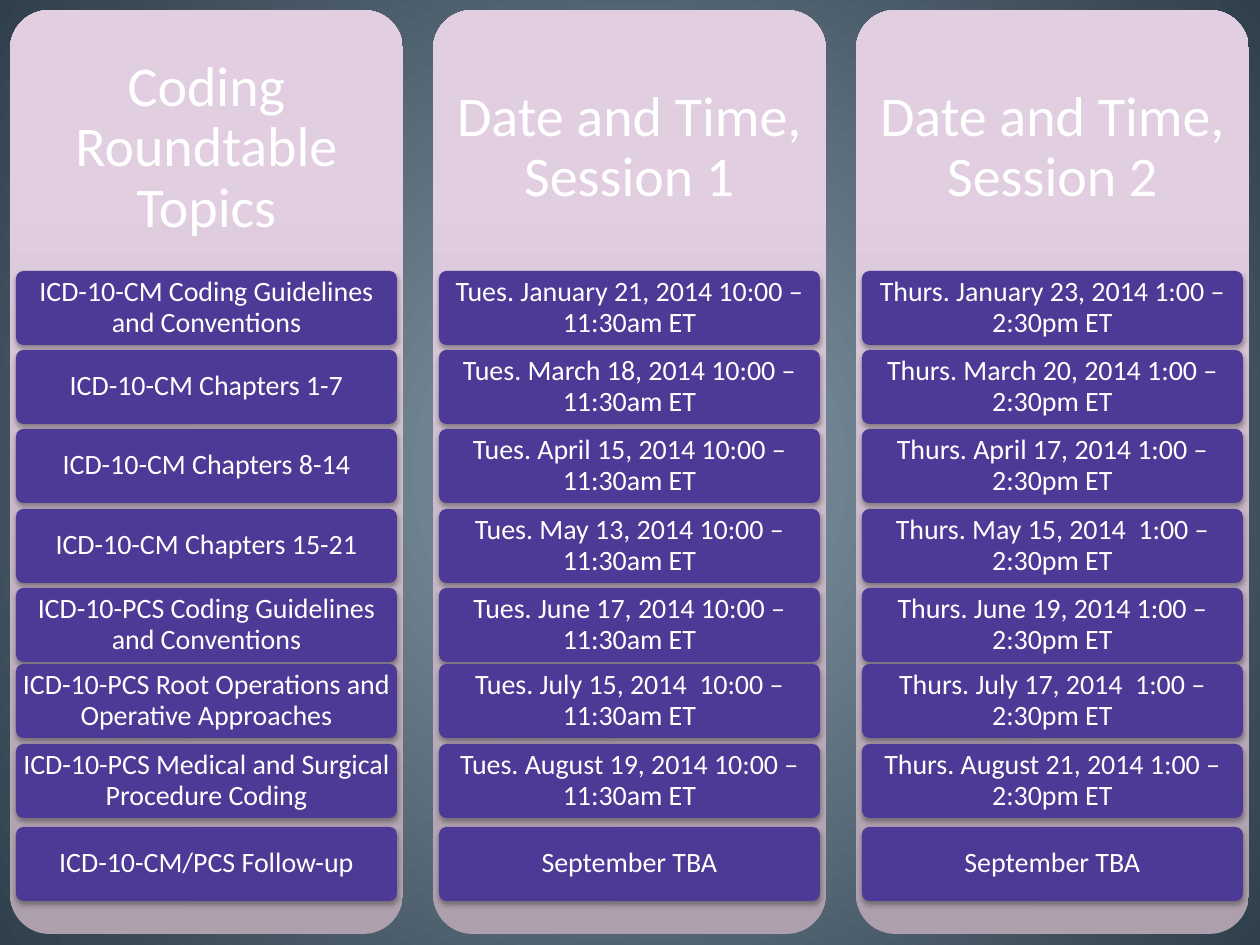
from lxml.etree import SubElement
from pptx import Presentation
from pptx.dml.color import RGBColor
from pptx.enum.shapes import MSO_SHAPE as Shape
from pptx.enum.text import MSO_ANCHOR as Anchor, PP_ALIGN as Align
from pptx.oxml import parse_xml
from pptx.oxml.ns import nsdecls, qn
from pptx.util import Inches, Pt

PX = 914400 // 126

COLUMN_LEFT, COLUMN_TOP, COLUMN_STEP = 10, 10, 423
COLUMN_WIDTH, COLUMN_HEIGHT, HEADER_HEIGHT = 393, 924, 277
CARD_INDENT, CARD_WIDTH, CARD_HEIGHT = 6, 381, 74
CARD_TOPS = [271, 350, 429, 509, 588, 664, 744, 827]

SHADOW = f"""<a:outerShdw {nsdecls('a')} blurRad="40000" dist="23000" dir="5400000"
  rotWithShape="0"><a:srgbClr val="000000"><a:alpha val="35000"/></a:srgbClr></a:outerShdw>"""
CENTRE_OUT = f"""<a:path {nsdecls('a')} path="circle">
  <a:fillToRect l="50000" t="50000" r="50000" b="50000"/></a:path>"""
BOTTOM_UP = f'<a:lin {nsdecls("a")} ang="16200000" scaled="0"/>'

COLUMNS = [
    ("Coding Roundtable Topics", [
        "ICD-10-CM Coding Guidelines and Conventions",
        "ICD-10-CM Chapters 1-7",
        "ICD-10-CM Chapters 8-14",
        "ICD-10-CM Chapters 15-21",
        "ICD-10-PCS Coding Guidelines and Conventions",
        "ICD-10-PCS Root Operations and Operative Approaches",
        "ICD-10-PCS Medical and Surgical Procedure Coding",
        "ICD-10-CM/PCS Follow-up",
    ]),
    ("Date and Time, Session 1", [
        "Tues. January 21, 2014 10:00 – 11:30am ET",
        "Tues. March 18, 2014 10:00 – 11:30am ET",
        "Tues. April 15, 2014 10:00 – 11:30am ET",
        "Tues. May 13, 2014 10:00 – 11:30am ET",
        "Tues. June 17, 2014 10:00 – 11:30am ET",
        "Tues. July 15, 2014  10:00 – 11:30am ET",
        "Tues. August 19, 2014 10:00 – 11:30am ET",
        "September TBA",
    ]),
    ("Date and Time, Session 2", [
        "Thurs. January 23, 2014 1:00 – 2:30pm ET",
        "Thurs. March 20, 2014 1:00 – 2:30pm ET",
        "Thurs. April 17, 2014 1:00 – 2:30pm ET",
        "Thurs. May 15, 2014  1:00 – 2:30pm ET",
        "Thurs. June 19, 2014 1:00 – 2:30pm ET",
        "Thurs. July 17, 2014  1:00 – 2:30pm ET",
        "Thurs. August 21, 2014 1:00 – 2:30pm ET",
        "September TBA",
    ]),
]


def set_gradient(fill, element, stops, direction):
    """Fill with (percent, colour) stops; element is the XML that holds the fill."""
    fill.gradient()
    gradient = element.find(".//" + qn("a:gradFill"))
    for child in list(gradient):
        gradient.remove(child)
    stop_list = SubElement(gradient, qn("a:gsLst"))
    for percent, colour in stops:
        stop = SubElement(stop_list, qn("a:gs"), pos=str(percent * 1000))
        SubElement(stop, qn("a:srgbClr"), val=colour)
    gradient.append(parse_xml(direction))


def write_text(box, text, size, side_inset, top_inset):
    frame = box.text_frame
    frame.word_wrap = True
    frame.vertical_anchor = Anchor.MIDDLE
    frame.margin_left = frame.margin_right = side_inset * PX
    frame.margin_top = frame.margin_bottom = top_inset * PX
    para = frame.paragraphs[0]
    para.text = text
    para.alignment = Align.CENTER
    para.line_spacing = 0.9
    para.font.name = "Calibri"
    para.font.size = Pt(size)
    para.font.color.rgb = RGBColor.from_string("FFFFFF")


deck = Presentation()
deck.slide_width, deck.slide_height = Inches(10), Inches(7.5)
page = deck.slides.add_slide(deck.slide_layouts[6])
set_gradient(page.background.fill, page.element,
             [(0, "8699A9"), (100, "2F3F4B")], CENTRE_OUT)

for index, (heading, entries) in enumerate(COLUMNS):
    left = COLUMN_LEFT + index * COLUMN_STEP
    panel = page.shapes.add_shape(Shape.ROUNDED_RECTANGLE, left * PX, COLUMN_TOP * PX,
                                  COLUMN_WIDTH * PX, COLUMN_HEIGHT * PX)
    panel.adjustments[0] = 0.1
    panel.shadow.inherit = False
    panel.line.fill.background()
    set_gradient(panel.fill, panel.element,
                 [(0, "AD9FAC"), (80, "E1CEE0"), (100, "E2CFE1")], BOTTOM_UP)

    header = page.shapes.add_textbox(left * PX, COLUMN_TOP * PX,
                                     COLUMN_WIDTH * PX, HEADER_HEIGHT * PX)
    write_text(header, heading, 32, 16, 16)

    for top, entry in zip(CARD_TOPS, entries):
        card = page.shapes.add_shape(Shape.ROUNDED_RECTANGLE, (left + CARD_INDENT) * PX,
                                     top * PX, CARD_WIDTH * PX, CARD_HEIGHT * PX)
        card.adjustments[0] = 0.1
        card.fill.solid()
        card.fill.fore_color.rgb = RGBColor.from_string("4C3A96")
        card.line.fill.background()
        card.shadow.inherit = False
        card.element.spPr.find(qn("a:effectLst")).append(parse_xml(SHADOW))
        write_text(card, entry, 16, 3, 2)

deck.save("out.pptx")
